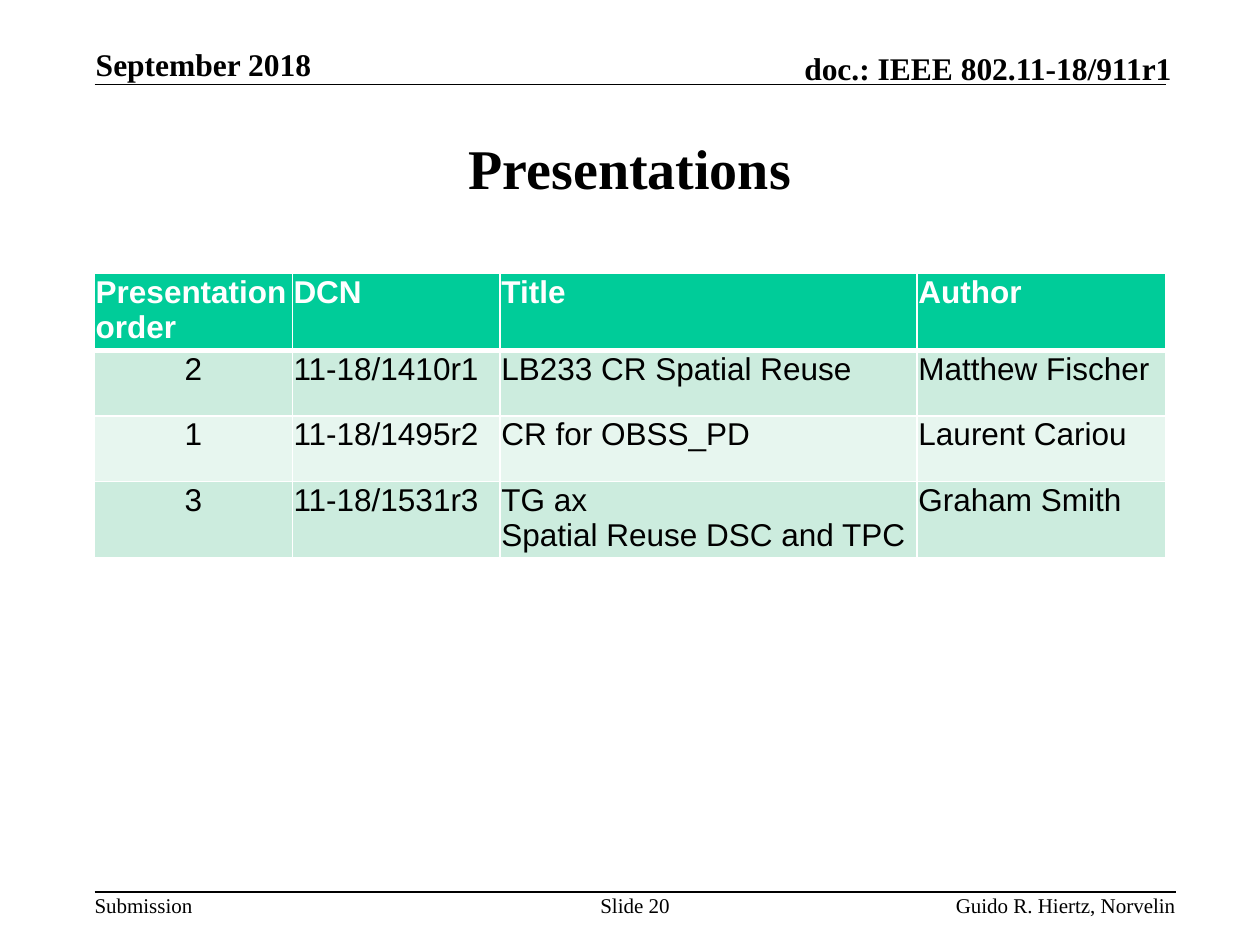
from dataclasses import dataclass

from lxml import etree
from pptx import Presentation
from pptx.dml.color import RGBColor
from pptx.enum.shapes import MSO_CONNECTOR
from pptx.enum.text import MSO_ANCHOR, PP_ALIGN
from pptx.oxml.ns import qn
from pptx.util import Inches, Pt


@dataclass(frozen=True)
class Theme:
    """Fonts, type sizes and colours of the slide."""
    serif: str = "Times New Roman"
    sans: str = "Arial"
    title_size: int = 32
    text_size: int = 18
    footer_size: int = 12
    ink: str = "000000"
    paper: str = "FFFFFF"
    header_fill: str = "00CC99"
    band_fills: tuple = ("CCECDE", "E7F6EF")


THEME = Theme()
COLUMN_WIDTHS = (1.57, 1.65, 3.31, 1.97)
ROW_HEIGHT = 0.52
ROWS = (
    ("Presentation order", "DCN", "Title", "Author"),
    ("2", "11-18/1410r1", "LB233 CR Spatial Reuse", "Matthew Fischer"),
    ("1", "11-18/1495r2", "CR for OBSS_PD", "Laurent Cariou"),
    ("3", "11-18/1531r3", "TG ax\nSpatial Reuse DSC and TPC", "Graham Smith"),
)


def write_text(paragraph, text, size, name, color=THEME.ink, bold=False, align=PP_ALIGN.LEFT):
    """Fill a paragraph and format its runs."""
    paragraph.text = text
    paragraph.alignment = align
    for run in paragraph.runs:
        run.font.size = Pt(size)
        run.font.name = name
        run.font.bold = bold
        run.font.color.rgb = RGBColor.from_string(color)


def set_margins(target, left, top, right, bottom):
    """Set the inner margins of a text frame or cell."""
    target.margin_left, target.margin_top = Inches(left), Inches(top)
    target.margin_right, target.margin_bottom = Inches(right), Inches(bottom)


def add_label(slide, box, text, size, bold=False, align=PP_ALIGN.LEFT, anchor=MSO_ANCHOR.TOP):
    """Add a text box without margins."""
    frame = slide.shapes.add_textbox(*map(Inches, box)).text_frame
    frame.word_wrap = True
    frame.vertical_anchor = anchor
    set_margins(frame, 0, 0, 0, 0)
    write_text(frame.paragraphs[0], text, size, THEME.serif, bold=bold, align=align)


def add_rule(slide, left, top, width):
    """Add a thin horizontal line."""
    line = slide.shapes.add_connector(
        MSO_CONNECTOR.STRAIGHT, Inches(left), Inches(top), Inches(left + width), Inches(top))
    line.line.width = Pt(1)
    line.line.color.rgb = RGBColor.from_string(THEME.ink)
    etree.SubElement(line._element.spPr, qn("a:effectLst"))


def add_header(slide, left, top, width, height):
    """Place the date, document number and rule at the top."""
    bottom = top + height
    add_rule(slide, left, bottom, width)
    add_label(slide, (left + 0.01, bottom - 0.31, 2.05, 0.3), "September 2018",
              THEME.text_size, bold=True, anchor=MSO_ANCHOR.BOTTOM)
    add_label(slide, (left + width - 3.78, bottom - 0.28, 3.83, 0.3), "doc.: IEEE 802.11-18/911r1",
              THEME.text_size, bold=True, align=PP_ALIGN.RIGHT, anchor=MSO_ANCHOR.BOTTOM)


def add_footer(slide, left, top, width, height):
    """Place the rule and the three labels at the bottom."""
    add_rule(slide, left, top, width)
    labels = (
        (left, 0.78, "Submission", PP_ALIGN.LEFT),
        (left + 4, 0.58, "Slide 20", PP_ALIGN.CENTER),
        (left + width - 3.48, 3.48, "Guido R. Hiertz, Norvelin", PP_ALIGN.RIGHT),
    )
    for label_left, label_width, text, align in labels:
        add_label(slide, (label_left, top, label_width, height), text, THEME.footer_size, align=align)


def set_title(slide, left, top, width, height):
    """Move and format the title placeholder."""
    title = slide.shapes.title
    title.left, title.top = Inches(left), Inches(top)
    title.width, title.height = Inches(width), Inches(height)
    frame = title.text_frame
    frame.vertical_anchor = MSO_ANCHOR.MIDDLE
    set_margins(frame, 0.1, 0.05, 0.1, 0.05)
    write_text(frame.paragraphs[0], "Presentations", THEME.title_size, THEME.serif,
               bold=True, align=PP_ALIGN.CENTER)


def set_borders(cell, top, bottom):
    """Draw the cell borders, with the given top and bottom widths."""
    properties = cell._tc.get_or_add_tcPr()
    for side, width in (("L", 1), ("R", 1), ("T", top), ("B", bottom)):
        border = etree.SubElement(properties, qn(f"a:ln{side}"), w=str(Pt(width)))
        fill = etree.SubElement(border, qn("a:solidFill"))
        etree.SubElement(fill, qn("a:srgbClr"), val=THEME.paper)


def add_schedule(slide, left, top, width, height):
    """Add the table of presentations."""
    table = slide.shapes.add_table(
        len(ROWS), len(COLUMN_WIDTHS), *map(Inches, (left, top, width, height))).table
    for column, column_width in zip(table.columns, COLUMN_WIDTHS):
        column.width = Inches(column_width)
    for row_index, texts in enumerate(ROWS):
        table.rows[row_index].height = Inches(ROW_HEIGHT)
        header = row_index == 0
        fill = THEME.header_fill if header else THEME.band_fills[(row_index - 1) % 2]
        for column_index, text in enumerate(texts):
            cell = table.cell(row_index, column_index)
            set_margins(cell, 0.01, 0.01, 0.01, 0)
            set_borders(cell, top=3 if row_index == 1 else 1, bottom=3 if header else 1)
            cell.fill.solid()
            cell.fill.fore_color.rgb = RGBColor.from_string(fill)
            centred = column_index == 0 and not header
            write_text(cell.text_frame.paragraphs[0], text, THEME.text_size, THEME.sans,
                       color=THEME.paper if header else THEME.ink, bold=header,
                       align=PP_ALIGN.CENTER if centred else PP_ALIGN.LEFT)


def main():
    """Build and save the slide."""
    presentation = Presentation()
    presentation.slide_width, presentation.slide_height = Inches(10), Inches(7.5)
    slide = presentation.slides.add_slide(presentation.slide_layouts[5])
    add_header(slide, 0.75, 0.36, 8.5, 0.31)
    set_title(slide, 0.75, 0.75, 8.5, 1.16)
    add_schedule(slide, 0.75, 2.17, sum(COLUMN_WIDTHS), ROW_HEIGHT * len(ROWS))
    add_footer(slide, 0.75, 7.08, 8.58, 0.2)
    presentation.save("out.pptx")


if __name__ == "__main__":
    main()
